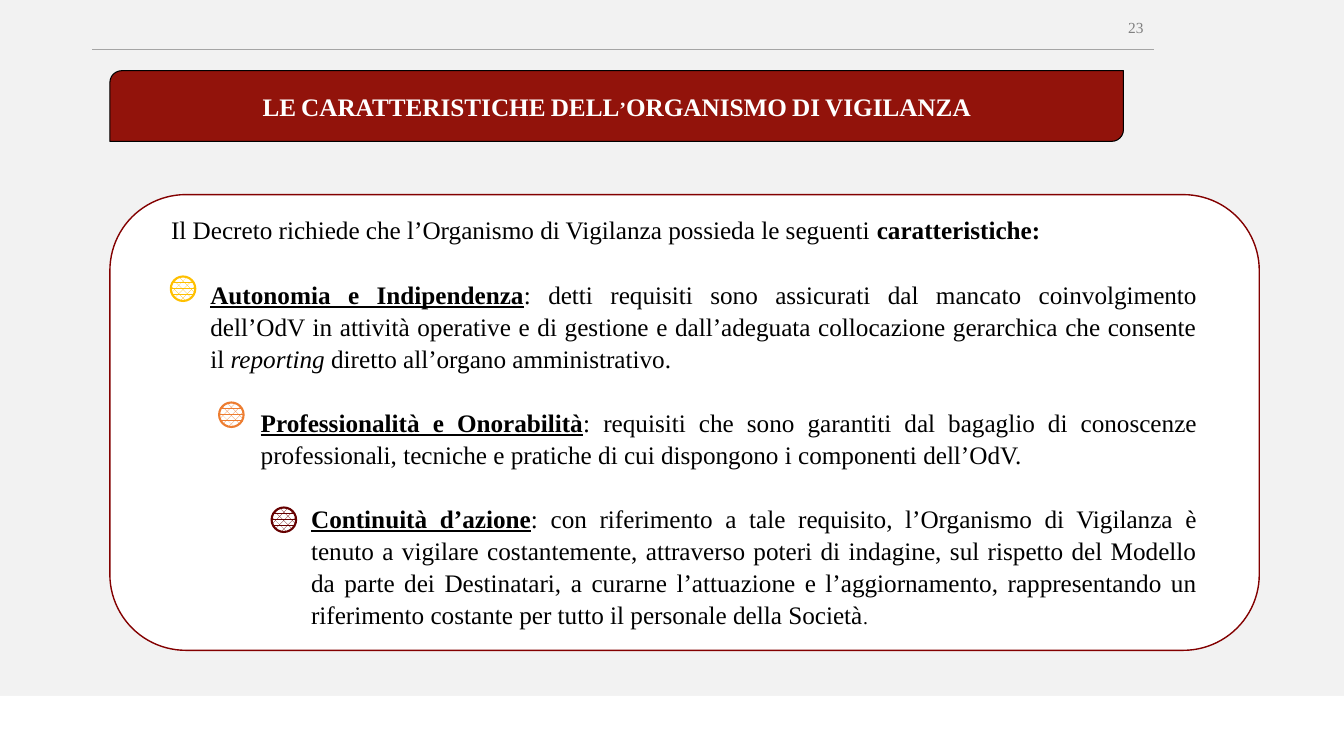
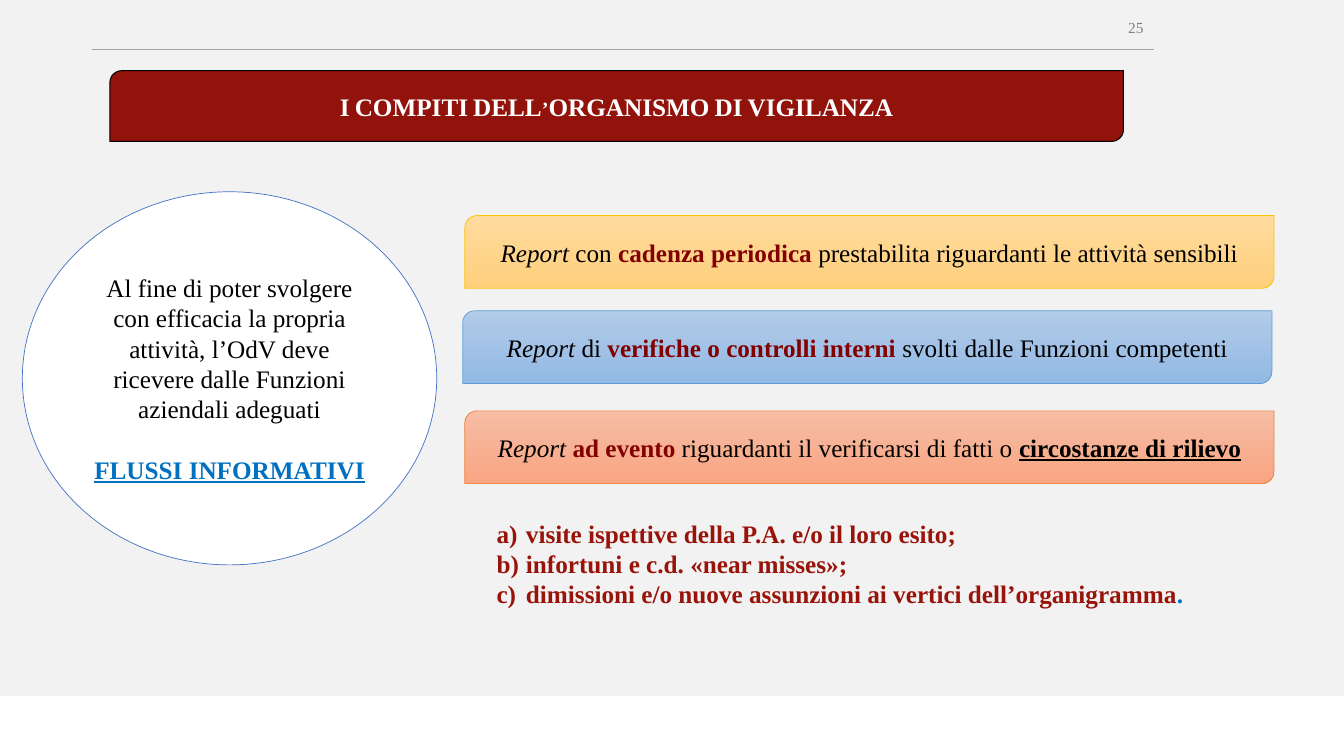
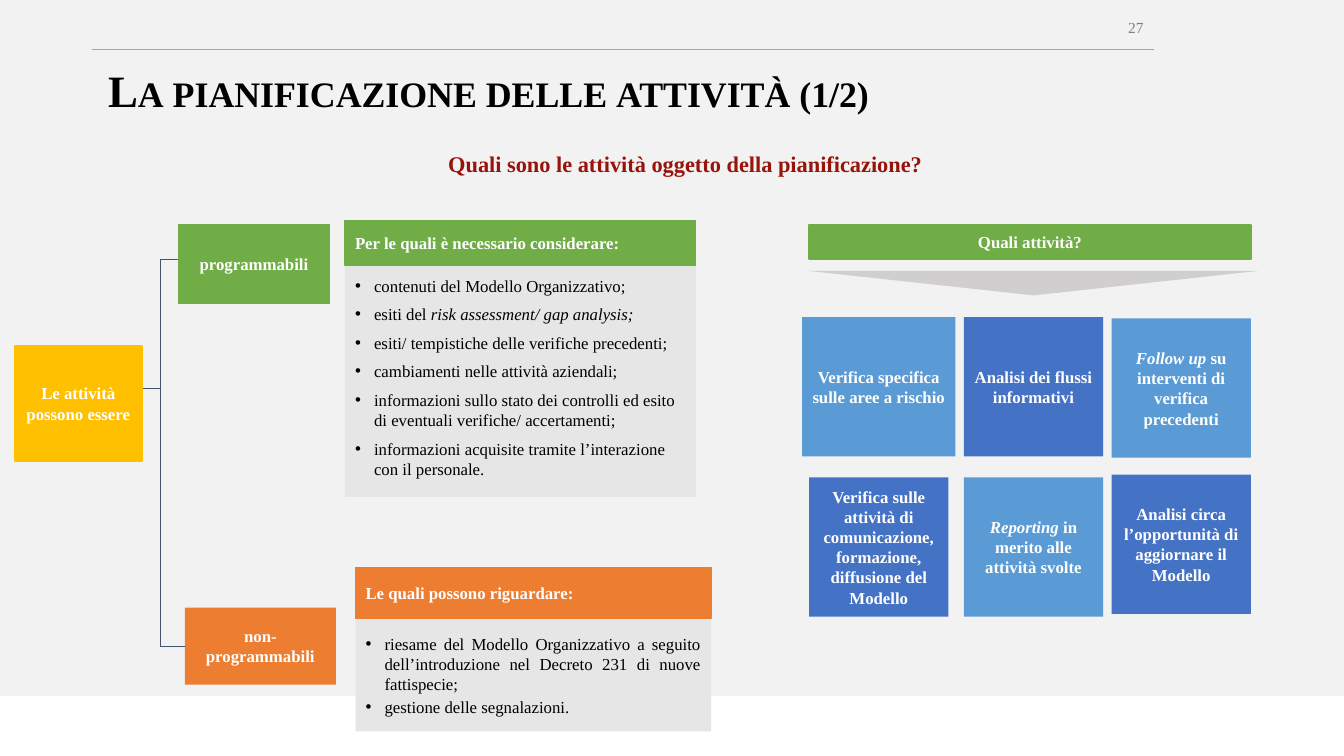
from collections import namedtuple
from dataclasses import dataclass

from lxml import etree
from pptx import Presentation
from pptx import util as u
from pptx.dml.color import RGBColor
from pptx.enum import dml, shapes, text
from pptx.oxml import ns

Span = namedtuple("Span", "text marks colour size", defaults=("", None, None))
SHAPE = shapes.MSO_SHAPE
LEFT, CENTER, RIGHT, JUSTIFY = (
    text.PP_ALIGN.LEFT, text.PP_ALIGN.CENTER, text.PP_ALIGN.RIGHT, text.PP_ALIGN.JUSTIFY)
TOP, MIDDLE = text.MSO_ANCHOR.TOP, text.MSO_ANCHOR.MIDDLE


@dataclass(frozen=True)
class Theme:
    """Colours and type sizes of the deck."""
    font: str = "Times New Roman"
    paper: str = "F2F2F2"
    white: str = "FFFFFF"
    black: str = "000000"
    banner: str = "92130B"
    dark_red: str = "830000"
    red: str = "98140B"
    wine: str = "660000"
    link: str = "0070C0"
    yellow: str = "FFC000"
    orange: str = "ED7D31"
    green: str = "70AD47"
    sky: str = "5B9BD5"
    blue: str = "4472C4"
    slate: str = "44546A"
    panel: str = "E7E6E6"
    silver: str = "D0CECE"
    rule: str = "A5A5A5"
    number: str = "808080"
    yellow_fade: tuple = ("FFDB9E", "FFD07C")
    blue_fade: tuple = ("B1CBE9", "93B9E4")
    orange_fade: tuple = ("F7BDA5", "F8A582")
    heading_size: float = 32
    text_size: float = 18
    question_size: float = 16
    full_stop_size: float = 14
    small_size: float = 12
    number_size: float = 11


class Deck:
    """Holds the theme and the current slide, and draws each kind of element."""

    def __init__(self, theme):
        self.theme = theme
        self.presentation = Presentation()
        self.presentation.slide_width, self.presentation.slide_height = u.Pt(960), u.Pt(540)
        self.paint(self.presentation.slide_master.background.fill, theme.paper)
        self.slide = None

    def new_slide(self, layout, number):
        self.slide = self.presentation.slides.add_slide(self.presentation.slide_layouts[layout])
        self.shape(SHAPE.RECTANGLE, (0, 497, 960, 43), self.theme.white)
        self.line((66, 35.5), (824.5, 35.5), self.theme.rule)
        self.textbox((608, 5, 216, 29), [[Span(number)]], size=self.theme.number_size,
                     colour=self.theme.number, align=RIGHT)

    def paint(self, fill, colour):
        if colour is None:
            fill.background()
        elif isinstance(colour, tuple):
            fill.gradient()
            fill.gradient_angle = 270
            for stop, shade in zip(fill.gradient_stops, colour):
                stop.color.rgb = RGBColor.from_string(shade)
        else:
            fill.solid()
            fill.fore_color.rgb = RGBColor.from_string(colour)

    def shape(self, kind, box, fill, line=None, width=0.5):
        shape = self.slide.shapes.add_shape(kind, *map(u.Pt, box))
        shape.shadow.inherit = False
        self.paint(shape.fill, fill)
        self.paint(shape.line.fill, line)
        if line:
            shape.line.width = u.Pt(width)
        return shape

    def line(self, start, end, colour):
        connector = self.slide.shapes.add_connector(
            shapes.MSO_CONNECTOR.STRAIGHT, *map(u.Pt, start + end))
        connector.line.color.rgb = RGBColor.from_string(colour)
        connector.line.width = u.Pt(0.5)
        etree.SubElement(connector._element.spPr, ns.qn("a:effectLst"))
        return connector

    def dot(self, left, top, colour):
        shape = self.shape(SHAPE.OVAL, (left, top, 17.5, 17.5), colour, colour, 1.5)
        shape.fill.patterned()
        shape.fill.pattern = dml.MSO_PATTERN.PERCENT_60
        shape.fill.fore_color.rgb = RGBColor.from_string(colour)
        shape.fill.back_color.rgb = RGBColor.from_string(self.theme.white)

    def textbox(self, box, paragraphs, **style):
        shape = self.slide.shapes.add_textbox(*map(u.Pt, box))
        self.set_text(shape.text_frame, paragraphs, **style)

    def block(self, box, spans, fill, line=None, width=1, align=CENTER):
        shape = self.shape(SHAPE.RECTANGLE, box, fill, line, width)
        self.set_text(shape.text_frame, [spans], size=self.theme.small_size,
                      colour=self.theme.white, marks="b", align=align)
        return shape

    def placeholder(self, index, box, paragraphs, fill=None, **style):
        shape = self.slide.placeholders[index]
        shape.left, shape.top, shape.width, shape.height = map(u.Pt, box)
        self.paint(shape.fill, fill)
        self.slide.shapes._spTree.append(shape._element)
        self.set_text(shape.text_frame, paragraphs, **style)

    def banner(self, title):
        box = (78.5, 50.5, 724, 50.5)
        self.shape(SHAPE.ROUND_2_DIAG_RECTANGLE, box, self.theme.banner, self.theme.black, 0.75)
        self.placeholder(0, box, [[Span(title)]], colour=self.theme.white, marks="bs",
                         align=CENTER)

    def set_text(self, frame, paragraphs, size=None, colour=None, marks="", align=LEFT,
                 anchor=MIDDLE, inset=(7.2, 3.6), gap=0, spacing=1.0, bullet="buNone",
                 bullet_value=None, margins=(0,), hang=0):
        frame.word_wrap = True
        frame.auto_size = text.MSO_AUTO_SIZE.NONE
        frame.vertical_anchor = anchor
        frame.margin_left = frame.margin_right = u.Pt(inset[0])
        frame.margin_top = frame.margin_bottom = u.Pt(inset[1])
        for position, spans in enumerate(paragraphs):
            paragraph = frame.add_paragraph() if position else frame.paragraphs[0]
            properties = paragraph._p.get_or_add_pPr()
            properties.set("marL", str(u.Pt(margins[position % len(margins)])))
            properties.set("indent", str(u.Pt(-hang)))
            mark = etree.SubElement(properties, ns.qn("a:" + bullet))
            if bullet_value:
                mark.set("char" if bullet == "buChar" else "type", bullet_value)
            paragraph.alignment = align
            paragraph.line_spacing = spacing
            paragraph.space_before = u.Pt(gap if position else 0)
            paragraph.space_after = u.Pt(0)
            for span in spans:
                run = paragraph.add_run()
                run.text = span.text
                self.style_run(run, span, size or self.theme.text_size,
                               colour or self.theme.black, marks + span.marks)

    def style_run(self, run, span, size, colour, marks):
        font = run.font
        font.name = self.theme.font
        font.size = u.Pt(span.size or size)
        font.color.rgb = RGBColor.from_string(span.colour or colour)
        font.bold, font.italic, font.underline = "b" in marks, "i" in marks, "u" in marks
        if "s" in marks:
            run._r.get_or_add_rPr().set("cap", "small")


def features_slide(deck):
    theme = deck.theme
    deck.new_slide(1, "23")
    deck.banner("LE CARATTERISTICHE DELL’ORGANISMO DI VIGILANZA")
    deck.shape(SHAPE.ROUNDED_RECTANGLE, (78.5, 139, 821, 325.5), theme.white, theme.dark_red, 1)
    deck.placeholder(1, (115, 148.5, 747.5, 307.5), [
        [Span("Il Decreto richiede che l’Organismo di Vigilanza possieda le seguenti "),
         Span("caratteristiche:", "b")],
        [Span("Autonomia e Indipendenza", "bu"),
         Span(": detti requisiti sono assicurati dal mancato coinvolgimento dell’OdV in attività "
              "operative e di gestione e dall’adeguata collocazione gerarchica che consente il "),
         Span("reporting ", "i"),
         Span("diretto all’organo amministrativo.")],
        [Span("Professionalità e Onorabilità", "bu"),
         Span(": requisiti che sono garantiti dal bagaglio di conoscenze professionali, tecniche "
              "e pratiche di cui dispongono i componenti dell’OdV.")],
        [Span("Continuità d’azione", "bu"),
         Span(": con riferimento a tale requisito, l’Organismo di Vigilanza è tenuto a vigilare "
              "costantemente, attraverso poteri di indagine, sul rispetto del Modello da parte "
              "dei Destinatari, a curarne l’attuazione e l’aggiornamento, rappresentando un "
              "riferimento costante per tutto il personale della Società"),
         Span(".", size=theme.full_stop_size)],
    ], align=JUSTIFY, anchor=TOP, gap=22.9, spacing=1.06, margins=(0, 28, 64, 100))
    for left, top, colour in ((122, 197.5, theme.yellow), (156.5, 287.5, theme.orange),
                              (194, 362.5, theme.wine)):
        deck.dot(left, top, colour)


def tasks_slide(deck):
    theme = deck.theme
    deck.new_slide(1, "25")
    deck.banner("I COMPITI DELL’ORGANISMO DI VIGILANZA")
    reports = (
        (332, 154, theme.yellow_fade, theme.yellow,
         [Span("Report", "i"), Span(" con "), Span("cadenza periodica ", "b", theme.dark_red),
          Span("prestabilita riguardanti le attività sensibili")]),
        (330.5, 222, theme.blue_fade, theme.sky,
         [Span("Report", "i"), Span(" di "),
          Span("verifiche o controlli interni ", "b", theme.dark_red),
          Span("svolti dalle Funzioni competenti")]),
        (332, 293.5, theme.orange_fade, theme.orange,
         [Span("Report ", "i"), Span("ad evento ", "b", theme.dark_red),
          Span("riguardanti il verificarsi di fatti o "), Span("circostanze di rilievo", "bu")]),
    )
    for left, top, fade, outline, spans in reports:
        report = deck.shape(SHAPE.ROUND_2_DIAG_RECTANGLE, (left, top, 578, 52), fade, outline)
        deck.set_text(report.text_frame, [spans], align=CENTER)
    deck.placeholder(1, (269.5, 366.5, 641.5, 73), [
        [Span("visite ispettive della P.A. e/o il loro esito;")],
        [Span("infortuni e c.d. «near misses»;")],
        [Span("dimissioni e/o nuove assunzioni ai vertici dell’organigramma"),
         Span(".", colour=theme.link)],
    ], colour=theme.red, marks="b", anchor=TOP, bullet="buAutoNum",
        bullet_value="alphaLcParenR", margins=(99,), hang=21)
    circle = deck.shape(SHAPE.OVAL, (16, 137, 296, 266.5), theme.white, theme.blue)
    deck.set_text(circle.text_frame, [
        [Span("Al fine di poter svolgere con efficacia la propria attività, l’OdV deve ricevere "
              "dalle Funzioni aziendali adeguati")],
        [Span("FLUSSI INFORMATIVI", "bu", theme.link)],
    ], align=CENTER, inset=(2.2, 2.2), gap=21.6)


def planning_slide(deck):
    theme = deck.theme
    deck.new_slide(3, "27")
    deck.placeholder(0, (70, 39, 724, 50.5), [[Span("La pianificazione delle attività (1/2)")]],
                     size=theme.heading_size, marks="bs")
    deck.textbox((286.5, 86.5, 406, 60),
                 [[Span("Quali sono le attività oggetto della pianificazione?")]],
                 size=theme.question_size, colour=theme.red, marks="b", align=CENTER)

    trunk, root_y, top_y, bottom_y = 114.5, 277.5, 185, 461.5
    for start, end in (((97, root_y), (trunk, root_y)), ((trunk, top_y), (trunk, bottom_y)),
                       ((trunk, top_y), (147, top_y))):
        deck.line(start, end, theme.slate)
    deck.block((10.5, 247, 91, 82), [Span("Le attività possono essere")],
               theme.yellow, theme.yellow, 1.5)
    deck.block((127.5, 160.5, 108, 56), [Span("programmabili")], theme.green, theme.green, 0.75)
    unplanned = deck.block((132, 434, 108, 55), [Span("non-programmabili")], theme.orange)
    branch = deck.line((trunk, bottom_y), (132, bottom_y), theme.slate)
    branch.end_connect(unplanned, 1)

    bullets = dict(size=theme.small_size, fill=theme.panel, inset=(7.2, 7.2),
                   bullet="buChar", bullet_value="•", margins=(13.5,), hang=13.5)
    deck.placeholder(1, (246.5, 189.5, 250.5, 165.5), [
        [Span("contenuti del Modello Organizzativo;")],
        [Span("esiti del "), Span("risk assessment/ gap analysis;", "i")],
        [Span("esiti/ tempistiche delle verifiche precedenti;")],
        [Span("cambiamenti nelle attività aziendali;")],
        [Span("informazioni sullo stato dei controlli ed esito di eventuali verifiche/ "
              "accertamenti;")],
        [Span("informazioni acquisite tramite l’interazione con il personale.")],
    ], anchor=TOP, gap=6, **bullets)
    deck.placeholder(2, (254, 442, 254, 80.5), [
        [Span("riesame del Modello Organizzativo a seguito dell’introduzione nel Decreto 231 di "
              "nuove fattispecie;")],
        [Span("gestione delle segnalazioni.")],
    ], align=JUSTIFY, gap=2, **bullets)
    deck.block((246.5, 157.5, 250.5, 32), [Span("Per le quali è necessario considerare:")],
               theme.green, theme.green, align=LEFT)
    deck.block((254, 405.5, 254, 36.5), [Span("Le quali possono riguardare:")],
               theme.orange, theme.orange, align=LEFT)

    deck.block((578, 160.5, 315.5, 24.5), [Span("Quali attività?")], theme.green, theme.green, 1.5)
    deck.shape(SHAPE.FLOWCHART_MERGE, (577.5, 193.5, 321.5, 17.5), theme.silver)
    activities = (
        (573, 226.5, 109.5, theme.sky, [Span("Verifica specifica sulle aree a rischio")]),
        (688.5, 226.5, 99.5, theme.blue, [Span("Analisi dei flussi informativi")]),
        (794, 227.5, 99.5, theme.sky,
         [Span("Follow up ", "i"), Span("su interventi di verifica precedenti")]),
        (578, 341, 99.5, theme.blue,
         [Span("Verifica sulle attività di comunicazione, formazione, diffusione del Modello")]),
        (688.5, 341, 99.5, theme.sky,
         [Span("Reporting", "i"), Span(" in merito alle attività svolte")]),
        (794, 339, 99.5, theme.blue,
         [Span("Analisi circa l’opportunità di aggiornare il Modello")]),
    )
    for left, top, width, colour, spans in activities:
        deck.block((left, top, width, 99.5), spans, colour)


def main():
    deck = Deck(Theme())
    features_slide(deck)
    tasks_slide(deck)
    planning_slide(deck)
    deck.presentation.save("out.pptx")


if __name__ == "__main__":
    main()
